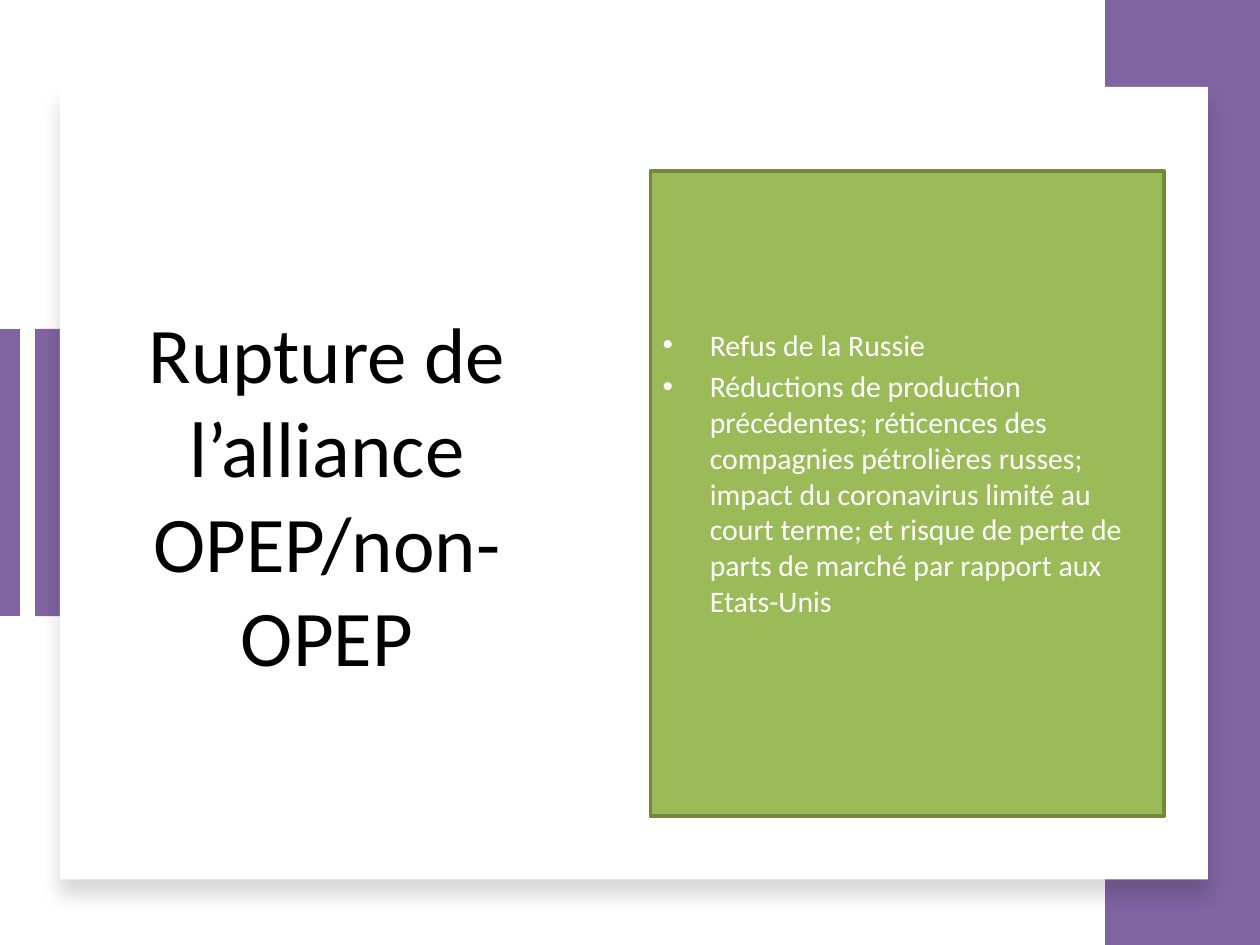
from pptx import Presentation
from pptx.dml.color import RGBColor
from pptx.enum.shapes import MSO_CONNECTOR, MSO_SHAPE
from pptx.enum.text import MSO_ANCHOR, PP_ALIGN
from pptx.oxml import parse_xml
from pptx.oxml.ns import nsdecls
from pptx.util import Cm, Pt

PURPLE = RGBColor(0x80, 0x64, 0xA2)
GREEN = RGBColor(0x9B, 0xBB, 0x59)
DARK_GREEN = RGBColor(0x71, 0x89, 0x3F)
WHITE = RGBColor(0xFF, 0xFF, 0xFF)
BLACK = RGBColor(0x00, 0x00, 0x00)

CONTENT_TOP = 3.45
CONTENT_HEIGHT = 13


class SlideBuilder:
    font_name = "Calibri"
    title_size = Pt(45)
    body_size = Pt(17)
    bullet_indent = Cm(0.95)

    def __init__(self, slide):
        self.slide = slide

    def rectangle(self, left, top, width, height, fill, border=None):
        shape = self.slide.shapes.add_shape(
            MSO_SHAPE.RECTANGLE, Cm(left), Cm(top), Cm(width), Cm(height))
        shape.shadow.inherit = False
        shape.fill.solid()
        shape.fill.fore_color.rgb = fill
        if border is None:
            shape.line.fill.background()
        else:
            shape.line.color.rgb = border
            shape.line.width = Pt(2)
        return shape

    def card(self, left, top, width, height):
        shape = self.rectangle(left, top, width, height, WHITE)
        effects = shape.element.spPr.find(
            "{http://schemas.openxmlformats.org/drawingml/2006/main}effectLst")
        effects.append(parse_xml(
            f'<a:outerShdw {nsdecls("a")} blurRad="{Pt(11)}" dist="{Pt(10)}" '
            'dir="5400000" algn="t" rotWithShape="0"><a:srgbClr val="000000">'
            '<a:alpha val="15000"/></a:srgbClr></a:outerShdw>'))

    def vertical_line(self, x, top, bottom, color, width):
        connector = self.slide.shapes.add_connector(
            MSO_CONNECTOR.STRAIGHT, Cm(x), Cm(top), Cm(x), Cm(bottom))
        connector.line.color.rgb = color
        connector.line.width = Pt(width)
        connector.element.spPr.append(
            parse_xml(f'<a:effectLst {nsdecls("a")}/>'))

    def add_run(self, paragraph, text, size, color):
        run = paragraph.add_run()
        run.text = text
        run.font.name = self.font_name
        run.font.size = size
        run.font.color.rgb = color

    def title(self, left, top, width, height, lines):
        shape = self.slide.shapes.add_textbox(
            Cm(left), Cm(top), Cm(width), Cm(height))
        frame = shape.text_frame
        frame.word_wrap = True
        frame.vertical_anchor = MSO_ANCHOR.MIDDLE
        paragraph = frame.paragraphs[0]
        paragraph.alignment = PP_ALIGN.CENTER
        for index, line in enumerate(lines):
            if index:
                paragraph.add_line_break()
            self.add_run(paragraph, line, self.title_size, BLACK)

    def bullet_panel(self, left, top, width, height, items):
        shape = self.rectangle(left, top, width, height, GREEN, DARK_GREEN)
        frame = shape.text_frame
        frame.word_wrap = True
        frame.vertical_anchor = MSO_ANCHOR.MIDDLE
        frame.margin_bottom = Cm(0.98)
        for index, item in enumerate(items):
            paragraph = frame.add_paragraph() if index else frame.paragraphs[0]
            paragraph.alignment = PP_ALIGN.LEFT
            paragraph.space_before = Pt(3.4)
            properties = paragraph._p.get_or_add_pPr()
            properties.set("marL", str(self.bullet_indent))
            properties.set("indent", str(-self.bullet_indent))
            properties.append(parse_xml(
                f'<a:buFont {nsdecls("a")} typeface="Arial"/>'))
            properties.append(parse_xml(
                f'<a:buChar {nsdecls("a")} char="•"/>'))
            self.add_run(paragraph, item, self.body_size, WHITE)


def main():
    presentation = Presentation()
    presentation.slide_width = Cm(25.4)
    presentation.slide_height = Cm(19.05)
    slide = presentation.slides.add_slide(presentation.slide_layouts[6])
    builder = SlideBuilder(slide)

    builder.rectangle(0.71, 6.63, 0.64, 5.79, PURPLE)
    builder.vertical_line(0.15, 6.63, 12.42, PURPLE, 14)
    builder.rectangle(22.28, 0, 3.12, 19.05, PURPLE)
    builder.card(1.21, 1.75, 23.14, 15.98)
    builder.title(2.41, CONTENT_TOP, 8.36, CONTENT_HEIGHT,
                  ["Rupture de l’alliance", "OPEP/non-OPEP"])
    builder.bullet_panel(13.11, CONTENT_TOP, 10.36, CONTENT_HEIGHT, [
        "Refus de la Russie",
        "Réductions de production précédentes; réticences des compagnies "
        "pétrolières russes; impact du coronavirus limité au court terme; "
        "et risque de perte de parts de marché par rapport aux Etats-Unis",
    ])
    presentation.save("out.pptx")


if __name__ == "__main__":
    main()
